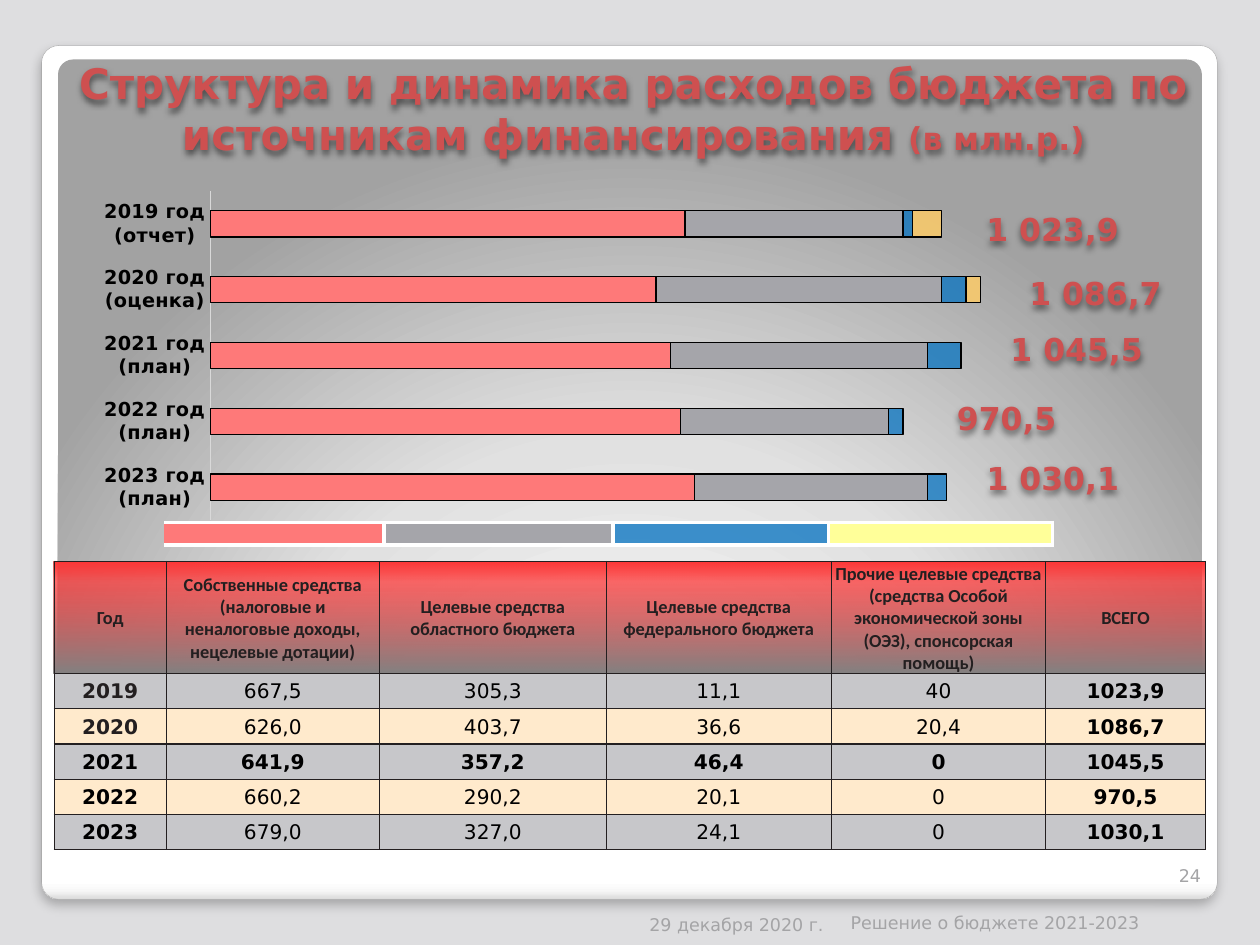
from pptx import Presentation
from pptx import util as u
from pptx.chart.data import CategoryChartData
from pptx.dml.color import RGBColor
from pptx.enum import chart as ch, shapes, text
from pptx.oxml import parse_xml
from pptx.oxml.ns import nsdecls, qn

Cm, Pt = u.Cm, u.Pt
FONT, HEAD_FONT = "DejaVu Sans", "Calibri"
BLACK = RGBColor(0, 0, 0)
WHITE = RGBColor(255, 255, 255)
BACKDROP = RGBColor(0xDE, 0xDE, 0xE0)
ACCENT = RGBColor(0xCE, 0x50, 0x50)
MUTED = RGBColor(0xA4, 0xA4, 0xA6)
EDGE = RGBColor(0xA4, 0xA4, 0xA4)
AXIS = RGBColor(0xD9, 0xD9, 0xD9)
INK = RGBColor(0x23, 0x1F, 0x20)
PINK = RGBColor(0xFE, 0x79, 0x79)
GREY = RGBColor(0xA5, 0xA5, 0xAA)
BLUE = RGBColor(0x00, 0x70, 0xC0)
AMBER = RGBColor(0xFF, 0xCC, 0x66)
YELLOW = RGBColor(0xFF, 0xFF, 0x99)
BANDS = (RGBColor(0xC7, 0xC7, 0xCA), RGBColor(0xFF, 0xEA, 0xCC))

# Gradient stops: position %, colour, opacity %
CARD_STOPS = [(0, "FFFFFF", 100), (98, "FFFFFF", 100), (99, "F7F7F7", 100), (100, "DADADA", 100)]
PANEL_STOPS = [(0, "FFFFFF", 100), (55, "E1E1E1", 100), (100, "A2A2A2", 100)]
HEAD_STOPS = [(0, "828282", 100), (82, "FF3434", 72), (100, "FE3737", 100)]
GLOW = ('<a:path path="circle"><a:fillToRect l="50000" t="175000" r="50000" b="-75000"/>'
        '</a:path>')

HEADERS = ["Год", "Собственные средства (налоговые и неналоговые доходы, нецелевые дотации)",
           "Целевые средства областного бюджета", "Целевые средства федерального бюджета",
           "Прочие целевые средства (средства Особой экономической зоны (ОЭЗ), спонсорская помощь)",
           "ВСЕГО"]
# Year, own, regional, federal, other, total
BUDGET = [("2019", "667,5", "305,3", "11,1", "40", "1023,9"),
          ("2020", "626,0", "403,7", "36,6", "20,4", "1086,7"),
          ("2021", "641,9", "357,2", "46,4", "0", "1045,5"),
          ("2022", "660,2", "290,2", "20,1", "0", "970,5"),
          ("2023", "679,0", "327,0", "24,1", "0", "1030,1")]
# Bars from the bottom up, scaled so that own funds of 2023 are 100
YEARS = ["2023 год (план)", "2022 год (план)", "2021 год (план)",
         "2020 год (оценка)", "2019 год (отчет)"]
# Name, values, colour, opacity %
SERIES = [("Собственные", (100, 97, 95, 92, 98), PINK, 100),
          ("Областные", (48, 43, 53, 59, 45), GREY, 100),
          ("Федеральные", (4, 3, 7, 5, 2), BLUE, 73),
          ("Прочие", (0, 0, 0, 3, 6), AMBER, 82)]
# Totals beside the bars: text, left, top, width
TOTALS = [("1 086,7", 20.47, 5.4, 3.23), ("1 045,5", 19.9, 6.53, 3.61),
          ("970,5", 18.9, 7.92, 2.79), ("1 030,1", 19.56, 9.12, 3.33),
          ("1 023,9", 19.53, 4.11, 3.38)]


def linear(degrees):
    return f'<a:lin ang="{degrees * 60000}" scaled="0"/>'


def set_gradient(fill, parent, stops, direction):
    fill.background()
    gs = "".join(f'<a:gs pos="{pos * 1000}"><a:srgbClr val="{color}">'
                 f'<a:alpha val="{alpha * 1000}"/></a:srgbClr></a:gs>'
                 for pos, color, alpha in stops)
    grad = parse_xml(f'<a:gradFill {nsdecls("a")} rotWithShape="1">'
                     f'<a:gsLst>{gs}</a:gsLst>{direction}</a:gradFill>')
    parent.replace(parent.find(qn("a:noFill")), grad)


def set_solid(fill, parent, color, alpha=100):
    fill.solid()
    fill.fore_color.rgb = color
    if alpha < 100:
        clr = next(parent.iter(qn("a:srgbClr")))
        clr.append(parse_xml(f'<a:alpha {nsdecls("a")} val="{alpha * 1000}"/>'))


def add_shadow(sp, blur, dist, alpha):
    sp.shadow.inherit = False
    sp._element.spPr.find(qn("a:effectLst")).append(parse_xml(
        f'<a:outerShdw {nsdecls("a")} blurRad="{Pt(blur)}" dist="{Pt(dist)}" dir="5400000" '
        f'algn="t" rotWithShape="0"><a:srgbClr val="000000"><a:alpha val="{alpha * 1000}"/>'
        '</a:srgbClr></a:outerShdw>'))


def set_font(font, size, color, bold=False, name=FONT):
    font.name, font.size, font.bold = name, Pt(size), bold
    font.color.rgb = color


def add_card(slide, box, stops, direction):
    sp = slide.shapes.add_shape(shapes.MSO_SHAPE.ROUNDED_RECTANGLE, *map(Cm, box))
    sp.adjustments[0] = 0.02
    sp.shadow.inherit = False
    set_gradient(sp.fill, sp._element.spPr, stops, direction)
    sp.line.fill.background()
    return sp


def add_text(slide, box, runs, size, color, align, bold=False):
    sp = slide.shapes.add_textbox(*map(Cm, box))
    tf = sp.text_frame
    tf.word_wrap = True
    tf.vertical_anchor = text.MSO_ANCHOR.BOTTOM
    p = tf.paragraphs[0]
    p.alignment = align
    set_font(p.font, size, color, bold)
    for content, run_size in runs:
        r = p.add_run()
        r.text = content
        if run_size != size:
            r.font.size = Pt(run_size)
    return sp


def add_bars(slide):
    data = CategoryChartData()
    data.categories = YEARS
    for name, values, *_ in SERIES:
        data.add_series(name, values)
    chart = slide.shapes.add_chart(ch.XL_CHART_TYPE.BAR_STACKED, Cm(1.09), Cm(3.52),
                                   Cm(23.01), Cm(9.6), data).chart
    chart.has_legend = chart.has_title = False
    set_font(chart.font, 10, BLACK)
    plot = chart.plots[0]
    plot.gap_width, plot.overlap, plot.vary_by_categories = 150, 100, False
    for ser, (_, _, color, alpha) in zip(plot.series, SERIES):
        set_solid(ser.format.fill, ser._element, color, alpha)
        ser.format.line.color.rgb = BLACK
        ser.format.line.width = Pt(0.75)

    cat, val = chart.category_axis, chart.value_axis
    cat.major_tick_mark = ch.XL_TICK_MARK.NONE
    set_font(cat.tick_labels.font, 11, BLACK, True)
    cat.format.line.color.rgb = AXIS
    cat.format.line.width = Pt(0.75)
    val.has_major_gridlines = val.visible = False
    val.minimum_scale, val.maximum_scale = 0, 176.5

    # Inner plot area, as shares of the chart
    area = chart._chartSpace.chart.plotArea
    for old in area.findall(qn("c:layout")):
        area.remove(old)
    place = "".join(f'<c:{k} val="{v}"/>' for k, v in (
        ("layoutTarget", "inner"), ("xMode", "edge"), ("yMode", "edge"),
        ("x", 0.137), ("y", 0.034), ("w", 0.749), ("h", 0.692)))
    area.insert(0, parse_xml(f'<c:layout {nsdecls("c")}><c:manualLayout>{place}'
                             '</c:manualLayout></c:layout>'))


def add_grid(slide, left, top, widths, heights):
    table = slide.shapes.add_table(len(heights), len(widths), Cm(left), Cm(top),
                                   Cm(sum(widths)), Cm(sum(heights))).table
    table.first_row = table.horz_banding = False
    for col, width in zip(table.columns, widths):
        col.width = Cm(width)
    for row, height in zip(table.rows, heights):
        row.height = Cm(height)
    return table


def set_cell(cell, content, size, color, bold, name, border, width, sides="LRTB"):
    cell.margin_left = cell.margin_right = cell.margin_top = Cm(0.03)
    cell.margin_bottom = 0
    cell.vertical_anchor = text.MSO_ANCHOR.MIDDLE
    p = cell.text_frame.paragraphs[0]
    p.alignment = text.PP_ALIGN.CENTER
    set_font(p.font, size, color, bold, name)
    if content:
        p.add_run().text = content
    tcPr = cell._tc.get_or_add_tcPr()
    for i, side in enumerate("LRTB"):
        paint = (f'<a:solidFill><a:srgbClr val="{border}"/></a:solidFill>' if side in sides
                 else '<a:noFill/>')
        tcPr.insert(i, parse_xml(
            f'<a:ln{side} {nsdecls("a")} w="{Pt(width)}">{paint}</a:ln{side}>'))
    return tcPr


def add_budget_table(slide):
    table = add_grid(slide, 1.09, 11.32, [2.26, 4.3, 4.57, 4.54, 4.32, 3.22], [2.26] + [0.71] * 5)
    for c, header in enumerate(HEADERS):
        cell = table.cell(0, c)
        tcPr = set_cell(cell, header, 10.5, INK, True, HEAD_FONT, INK, 0.75)
        set_gradient(cell.fill, tcPr, HEAD_STOPS, linear(270))
    for r, row in enumerate(BUDGET, start=1):
        for c, content in enumerate(row):
            cell = table.cell(r, c)
            bold = c in (0, 5) or row[0] == "2021"
            color = INK if c == 0 and r <= 2 else BLACK
            tcPr = set_cell(cell, content, 11.5, color, bold, FONT, INK, 0.75)
            set_solid(cell.fill, tcPr, BANDS[(r - 1) % 2])


def add_colour_key(slide):
    table = add_grid(slide, 3.31, 10.53, [4.43, 4.62, 4.34, 4.52], [0.46])
    for c, (color, alpha) in enumerate(((PINK, 100), (GREY, 100), (BLUE, 74), (YELLOW, 100))):
        cell = table.cell(0, c)
        set_solid(cell.fill, cell._tc.get_or_add_tcPr(), color, alpha)
        set_cell(cell, "", 6, BLACK, False, FONT, WHITE, 2.25, "LRTB" if c else "RTB")


def main():
    prs = Presentation()
    prs.slide_width, prs.slide_height = Cm(25.4), Cm(19.05)
    slide = prs.slides.add_slide(prs.slide_layouts[6])
    slide.background.fill.solid()
    slide.background.fill.fore_color.rgb = BACKDROP
    align = text.PP_ALIGN

    # Card and inner panel
    card = add_card(slide, (0.84, 0.92, 23.7, 17.21), CARD_STOPS, linear(90))
    card.line.color.rgb = EDGE
    card.line.width = Pt(0.16)
    add_shadow(card, 6, 4, 25)
    add_card(slide, (1.17, 1.2, 23.06, 15.24), PANEL_STOPS, GLOW)

    # Title and footer
    title = add_text(slide, (1.3, 1.31, 22.94, 2.01),
                     [("Структура и динамика расходов бюджета по источникам финансирования ", 24),
                      ("(в млн.р.)", 18)], 24, ACCENT, align.CENTER, True)
    add_shadow(title, 4, 2, 50)
    for content, left, top, width, side in (
            ("24", 23.19, 16.97, 1.27, align.RIGHT),
            ("29 декабря 2020 г.", 10.5, 17.95, 6.35, align.RIGHT),
            ("Решение о бюджете 2021-2023", 16.9, 17.92, 6.35, align.LEFT)):
        add_text(slide, (left, top, width, 1.02), [(content, 10)], 10, MUTED, side)

    # Chart with totals
    add_bars(slide)
    for content, left, top, width in TOTALS:
        sp = add_text(slide, (left, top, width, 1.02), [(content, 18)], 18, ACCENT, align.CENTER, True)
        add_shadow(sp, 4, 2, 50)

    # Tables
    add_budget_table(slide)
    add_colour_key(slide)
    prs.save("out.pptx")


if __name__ == "__main__":
    main()
